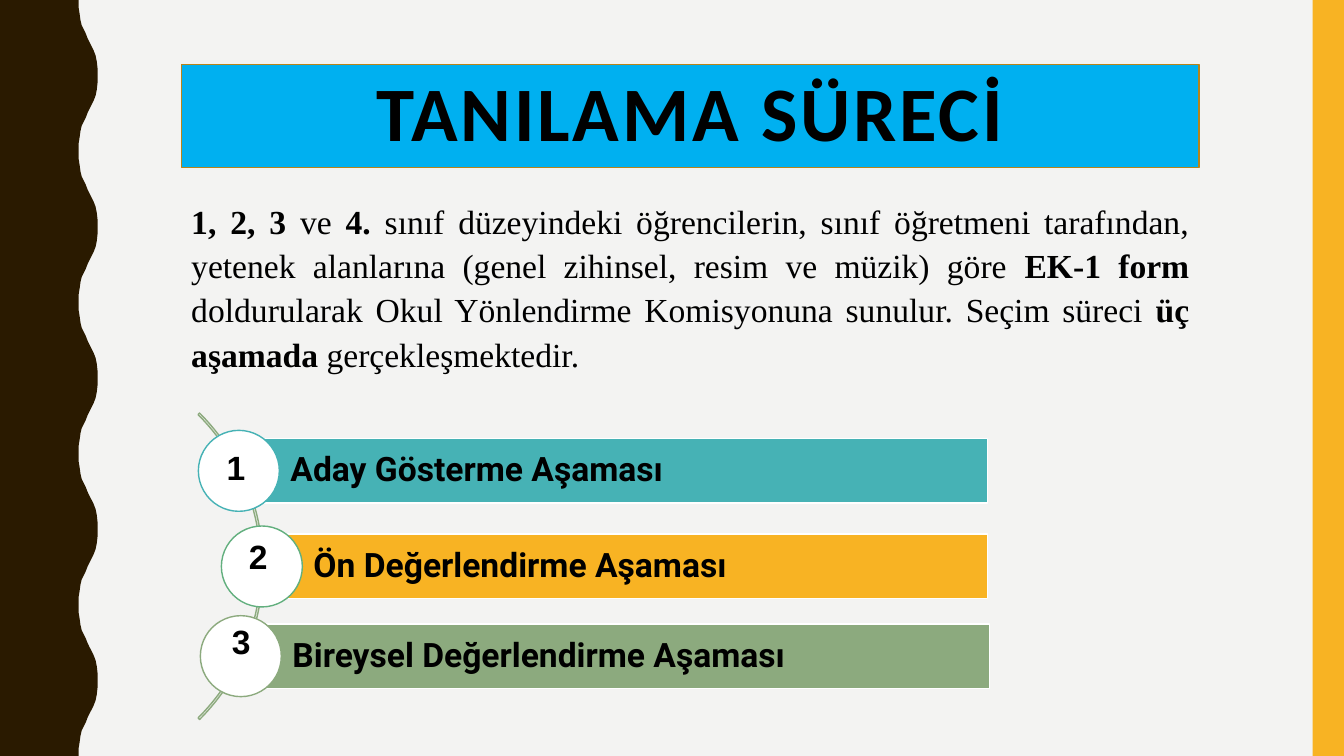
from dataclasses import dataclass

from pptx import Presentation
from pptx.dml.color import RGBColor
from pptx.enum.shapes import MSO_SHAPE
from pptx.enum.text import MSO_ANCHOR, PP_ALIGN
from pptx.util import Cm, Pt

RECT, OVAL, ARC = MSO_SHAPE.RECTANGLE, MSO_SHAPE.OVAL, MSO_SHAPE.BLOCK_ARC
TOP, MIDDLE = MSO_ANCHOR.TOP, MSO_ANCHOR.MIDDLE
LEFT, CENTER, JUSTIFY = PP_ALIGN.LEFT, PP_ALIGN.CENTER, PP_ALIGN.JUSTIFY


@dataclass(frozen=True)
class Theme:
    background: str = "F3F3F2"
    brown: str = "2A1A00"
    amber: str = "F8B323"
    amber_dark: str = "B7841A"
    blue: str = "00B0F0"
    teal: str = "46B2B5"
    green: str = "62AF7E"
    sage: str = "8CAA7E"
    white: str = "FFFFFF"
    black: str = "000000"
    title_size: int = 55
    text_size: int = 24


theme = Theme()
prs = Presentation()
prs.slide_width, prs.slide_height = Cm(33.87), Cm(19.05)
s = prs.slides.add_slide(prs.slide_layouts[6])
s.background.fill.solid()
s.background.fill.fore_color.rgb = RGBColor.from_string(theme.background)


def paint(sp, fill=None, line=None):
    sp.shadow.inherit = False
    if fill:
        sp.fill.solid()
        sp.fill.fore_color.rgb = RGBColor.from_string(fill)
    else:
        sp.fill.background()
    if line:
        sp.line.color.rgb = RGBColor.from_string(line)
        sp.line.width = Pt(1)
    else:
        sp.line.fill.background()


def write(sp, runs, font, size, align, anchor, spacing=1.0):
    tf = sp.text_frame
    tf.word_wrap = True
    tf.vertical_anchor = anchor
    p = tf.paragraphs[0]
    p.alignment = align
    p.line_spacing = spacing
    for text, bold in runs:
        r = p.add_run()
        r.text = text
        r.font.name = font
        r.font.size = Pt(size)
        r.font.bold = bold
        r.font.color.rgb = RGBColor.from_string(theme.black)
    return p


period = 3.81
rise = [(1.98, 0), (1.98, 0.18), (2.01, 0.36), (2.03, 0.51), (2.06, 0.64),
        (2.11, 0.74), (2.16, 0.84), (2.21, 0.97), (2.26, 1.07), (2.31, 1.17),
        (2.36, 1.27), (2.41, 1.4), (2.44, 1.55), (2.46, 1.73), (2.46, 1.91)]
wave = rise + [(x, period - y) for x, y in reversed(rise[:-1])]
edge = [(Cm(x), Cm(y + i * period)) for i in range(5) for x, y in wave]
fb = s.shapes.build_freeform(0, 0)
fb.add_line_segments(edge + [(0, Cm(19.05))], close=True)
paint(fb.convert_to_shape(), theme.brown)

stripe = s.shapes.add_shape(RECT, Cm(33.08), 0, Cm(0.79), Cm(19.05))
paint(stripe, theme.amber)

title = s.shapes.add_shape(RECT, Cm(4.57), Cm(1.63), Cm(25.65), Cm(2.59))
paint(title, theme.blue, theme.amber_dark)
p = write(title, [("TANILAMA SÜRECİ", True)], "Calibri", theme.title_size,
          CENTER, MIDDLE, 0.9)
p.runs[0].font._element.set("spc", "200")

body = s.shapes.add_textbox(Cm(4.57), Cm(4.83), Cm(25.65), Cm(5.26))
p = write(body, [
    ("1, 2, 3 ", True),
    ("ve ", False),
    ("4. ", True),
    ("sınıf düzeyindeki öğrencilerin, sınıf öğretmeni tarafından, yetenek "
     "alanlarına (genel zihinsel, resim ve müzik) göre ", False),
    ("EK-1 form ", True),
    ("doldurularak Okul Yönlendirme Komisyonuna sunulur. Seçim süreci ", False),
    ("üç aşamada ", True),
    ("gerçekleşmektedir.", False),
], "Times New Roman", theme.text_size, JUSTIFY, TOP, 1.1)
p.space_before = Pt(7)

arc = s.shapes.add_shape(ARC, Cm(-4.29), Cm(8.81), Cm(10.92), Cm(10.92))
for i, value in enumerate((189, 27, 0.005)):
    arc.adjustments[i] = value
paint(arc, line=theme.sage)

bar_height, circle_size = 1.63, 2.04
stages = [
    ("Aday Gösterme Aşaması", 6.02, 11.05, 18.87, theme.teal, theme.teal, 5.33, 11.13),
    ("Ön Değerlendirme Aşaması", 6.6, 13.46, 18.29, theme.amber, theme.green, 5.89, 13.39),
    ("Bireysel Değerlendirme Aşaması", 6.07, 15.72, 18.87, theme.sage, theme.sage, 5.46, 15.52),
]
for number, (name, x, y, width, fill, ring, label_x, label_y) in enumerate(stages, 1):
    bar = s.shapes.add_shape(RECT, Cm(x), Cm(y), Cm(width), Cm(bar_height))
    paint(bar, fill, theme.white)
    write(bar, [(name, True)], "Roboto", theme.text_size, LEFT, MIDDLE, 0.9)
    tf = bar.text_frame
    tf.margin_left = Cm(1.3)
    tf.margin_top = tf.margin_right = tf.margin_bottom = Cm(0.18)

    circle = s.shapes.add_shape(OVAL, Cm(x - circle_size / 2),
                                Cm(y + (bar_height - circle_size) / 2),
                                Cm(circle_size), Cm(circle_size))
    paint(circle, theme.white, ring)

    label = s.shapes.add_textbox(Cm(label_x), Cm(label_y), Cm(1.24), Cm(1.3))
    write(label, [(str(number), True)], "Arial", theme.text_size, CENTER, TOP)

prs.save("out.pptx")
